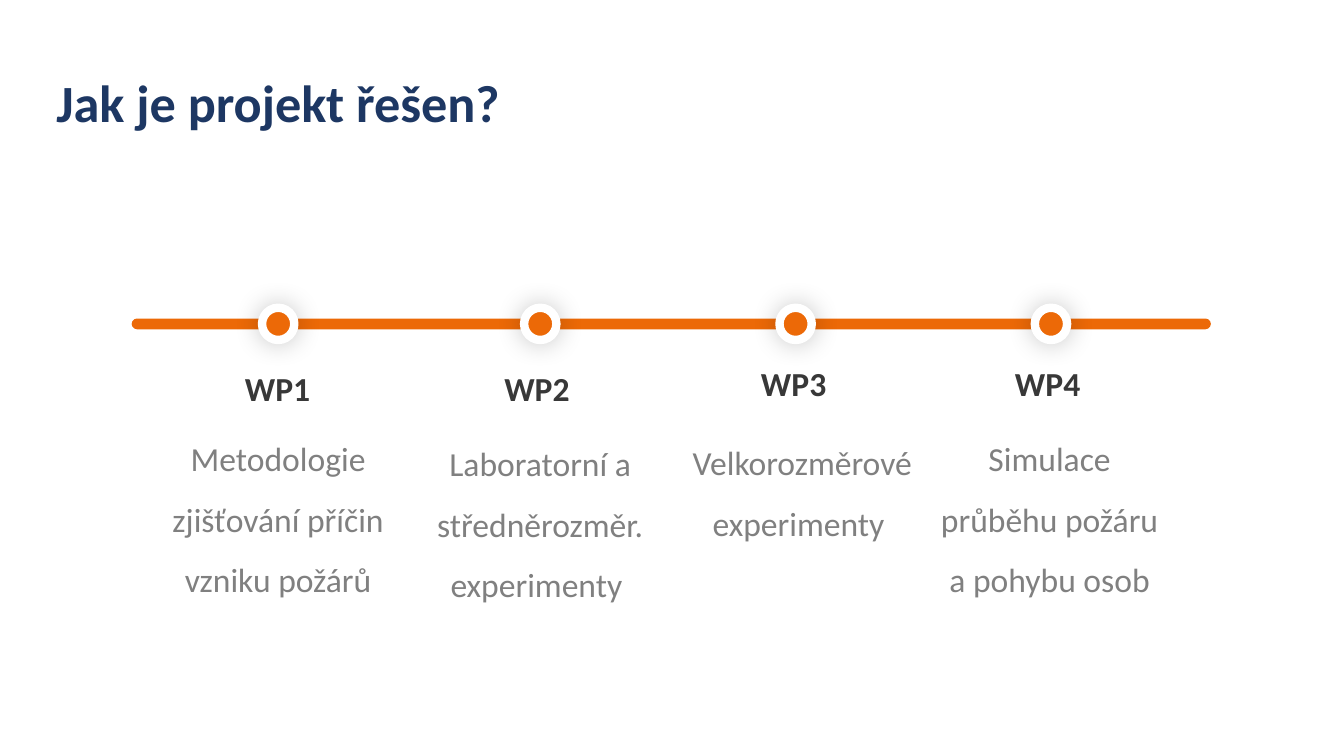
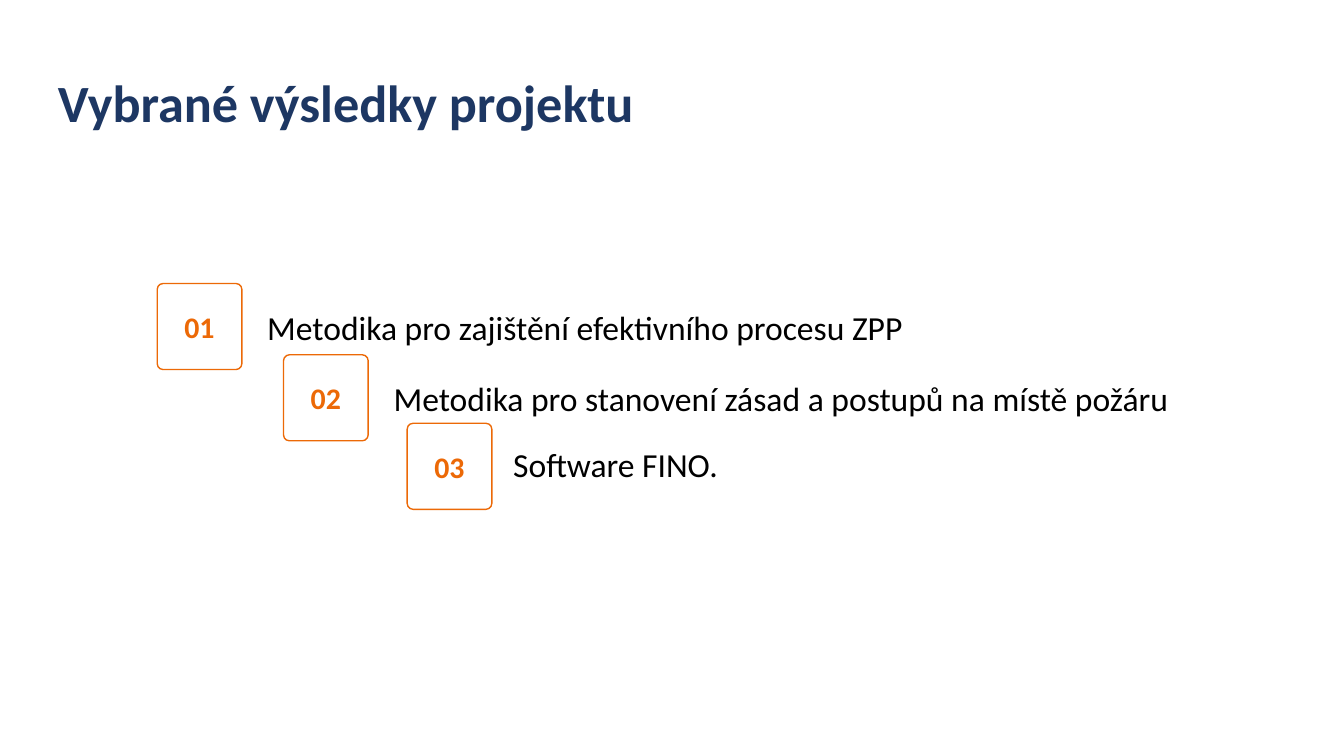
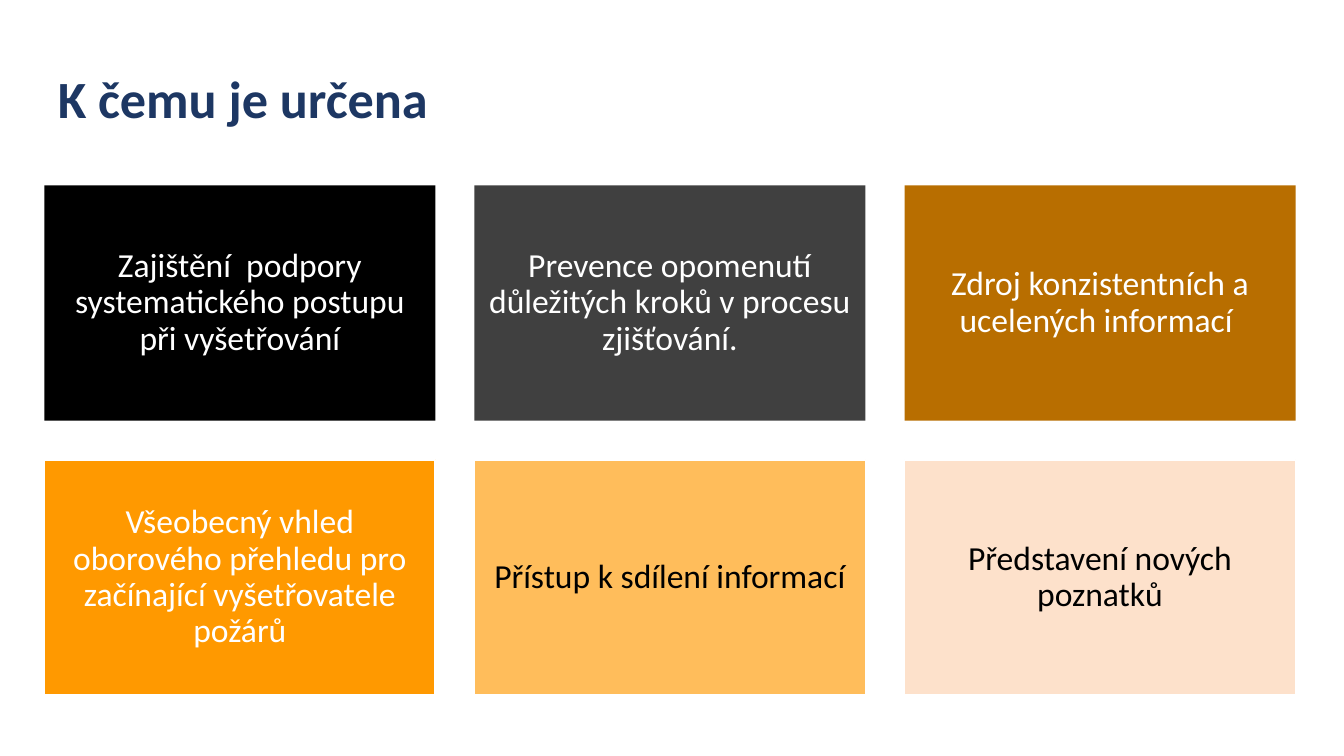
from lxml import etree
from pptx import Presentation
from pptx.dml.color import RGBColor
from pptx.enum import shapes, text
from pptx.oxml import ns
from pptx.util import Inches, Pt

FONT = "Calibri"
NAVY, ORANGE, WHITE, BLACK = "1D3763", "EC6907", "FFFFFF", "000000"
DARK_GREY, GREY = "383838", "808080"
CENTER, LEFT, JUSTIFY = text.PP_ALIGN.CENTER, text.PP_ALIGN.LEFT, text.PP_ALIGN.JUSTIFY
MIDDLE, TOP = text.MSO_ANCHOR.MIDDLE, text.MSO_ANCHOR.TOP


def write(shape, words, size, color, bold=False, align=CENTER, spacing=1, anchor=TOP, wrap=True):
    """Fill a shape, text box or placeholder with one formatted paragraph."""
    tf = shape.text_frame
    tf.text = words
    tf.auto_size = text.MSO_AUTO_SIZE.NONE
    tf.word_wrap = wrap
    tf.vertical_anchor = anchor
    p = tf.paragraphs[0]
    p.alignment = align
    p.line_spacing = spacing
    font = p.runs[0].font
    font.name, font.size, font.bold = FONT, Pt(size), bold
    font.color.rgb = RGBColor.from_string(color)


def add_box(s, kind, at, fill=None, line=None, line_width=1):
    """Add a preset shape; without a fill or line colour that part is left empty."""
    sp = s.shapes.add_shape(kind, *map(Inches, at))
    sp.shadow.inherit = False
    if fill:
        sp.fill.solid()
        sp.fill.fore_color.rgb = RGBColor.from_string(fill)
    else:
        sp.fill.background()
    if line:
        sp.line.color.rgb = RGBColor.from_string(line)
        sp.line.width = Pt(line_width)
    else:
        sp.line.fill.background()
    return sp


prs = Presentation()
prs.slide_width = Inches(10)
prs.slide_height = prs.slide_width * 9 // 16

titles = [
    ("Jak je projekt řešen?", 0.32, 0.47, 3.54),
    ("Vybrané výsledky projektu", 0.33, 0.47, 4.53),
    ("K čemu je určena", 0.33, 0.44, 3.52),
]
slides = []
for words, left, top, width in titles:
    s = prs.slides.add_slide(prs.slide_layouts[5])
    title = s.shapes.title
    title.left, title.top = Inches(left), Inches(top)
    title.width, title.height = Inches(width), Inches(0.57)
    write(title, words, 28, NAVY, bold=True, align=LEFT, wrap=False)
    slides.append(s)
timeline, results, purposes = slides

# Timeline of work packages
bar = add_box(timeline, shapes.MSO_SHAPE.ROUNDED_RECTANGLE, (0.98, 2.37, 8.03, 0.08), ORANGE)
bar.adjustments[0] = 0.5

# dot left, label left and top, description left, top and height, description
packages = [
    (1.95, 1.72, 2.69, 1.15, 3.06, 1.42, "Metodologie zjišťování příčin vzniku požárů"),
    (3.9, 3.65, 2.69, 3.1, 3.1, 1.42, "Laboratorní a středněrozměr. experimenty "),
    (5.8, 5.56, 2.65, 5.05, 3.09, 0.96, "Velkorozměrové experimenty "),
    (7.7, 7.45, 2.65, 6.89, 3.06, 1.42, "Simulace průběhu požáru a pohybu osob"),
]
for number, (dot_x, label_x, label_y, body_x, body_y, height, words) in enumerate(packages, 1):
    dot = add_box(timeline, shapes.MSO_SHAPE.OVAL, (dot_x, 2.29, 0.24, 0.24), ORANGE, WHITE, 4.5)
    effects = dot._element.spPr.find(ns.qn("a:effectLst"))
    glow = etree.SubElement(effects, ns.qn("a:outerShdw"), blurRad=str(Pt(14)), dist="0",
                            dir="5400000", algn="ctr", rotWithShape="0")
    color = etree.SubElement(glow, ns.qn("a:srgbClr"), val=BLACK)
    etree.SubElement(color, ns.qn("a:alpha"), val="22000")

    label = timeline.shapes.add_textbox(*map(Inches, (label_x, label_y, 0.69, 0.4)))
    write(label, f"WP{number}", 18, DARK_GREY, bold=True, wrap=False)
    body = timeline.shapes.add_textbox(*map(Inches, (body_x, body_y, 1.84, height)))
    write(body, words, 18, GREY, spacing=1.5)

# Staircase of numbered results: square left and top, text left, top and width
steps = [
    (1.17, 2.11, 1.89, 2.19, 5.07, "Metodika pro zajištění efektivního procesu ZPP "),
    (2.11, 2.64, 2.83, 2.72, 6.29, "Metodika pro stanovení zásad a postupů na místě požáru "),
    (3.03, 3.15, 3.72, 3.21, 1.74, "Software FINO."),
]
for number, (x, y, text_x, text_y, width, words) in enumerate(steps, 1):
    square = add_box(results, shapes.MSO_SHAPE.ROUNDED_RECTANGLE, (x, y, 0.63, 0.64),
                     line=ORANGE, line_width=0.75)
    square.adjustments[0] = 0.07
    write(square, f"{number:02}", 16, ORANGE, bold=True, anchor=MIDDLE, wrap=False)
    result = results.shapes.add_textbox(*map(Inches, (text_x, text_y, width, 0.43)))
    write(result, words, 18, BLACK, align=JUSTIFY, spacing=1.15)

# Grid of purposes, three to a row
cards = [
    ("Zajištění  podpory systematického postupu při vyšetřování", BLACK, WHITE, None),
    ("Prevence opomenutí důležitých kroků v procesu zjišťování.", "404040", WHITE, None),
    ("Zdroj konzistentních a ucelených informací ", "B86E00", WHITE, None),
    ("Všeobecný vhled oborového přehledu pro začínající vyšetřovatele požárů",
     "FF9900", WHITE, WHITE),
    ("Přístup k sdílení informací", "FFBD5B", BLACK, WHITE),
    ("Představení nových poznatků", "FDE1CB", BLACK, WHITE),
]
for i, (words, fill, color, line) in enumerate(cards):
    row, col = divmod(i, 3)
    card = add_box(purposes, shapes.MSO_SHAPE.RECTANGLE,
                   (0.33 + col * 3.2, 1.38 + row * 2.04, 2.91, 1.75), fill, line)
    write(card, words, 18, color, spacing=0.9, anchor=MIDDLE)
    tf = card.text_frame
    tf.margin_left = tf.margin_right = tf.margin_top = tf.margin_bottom = Inches(0.07)

prs.save("out.pptx")
